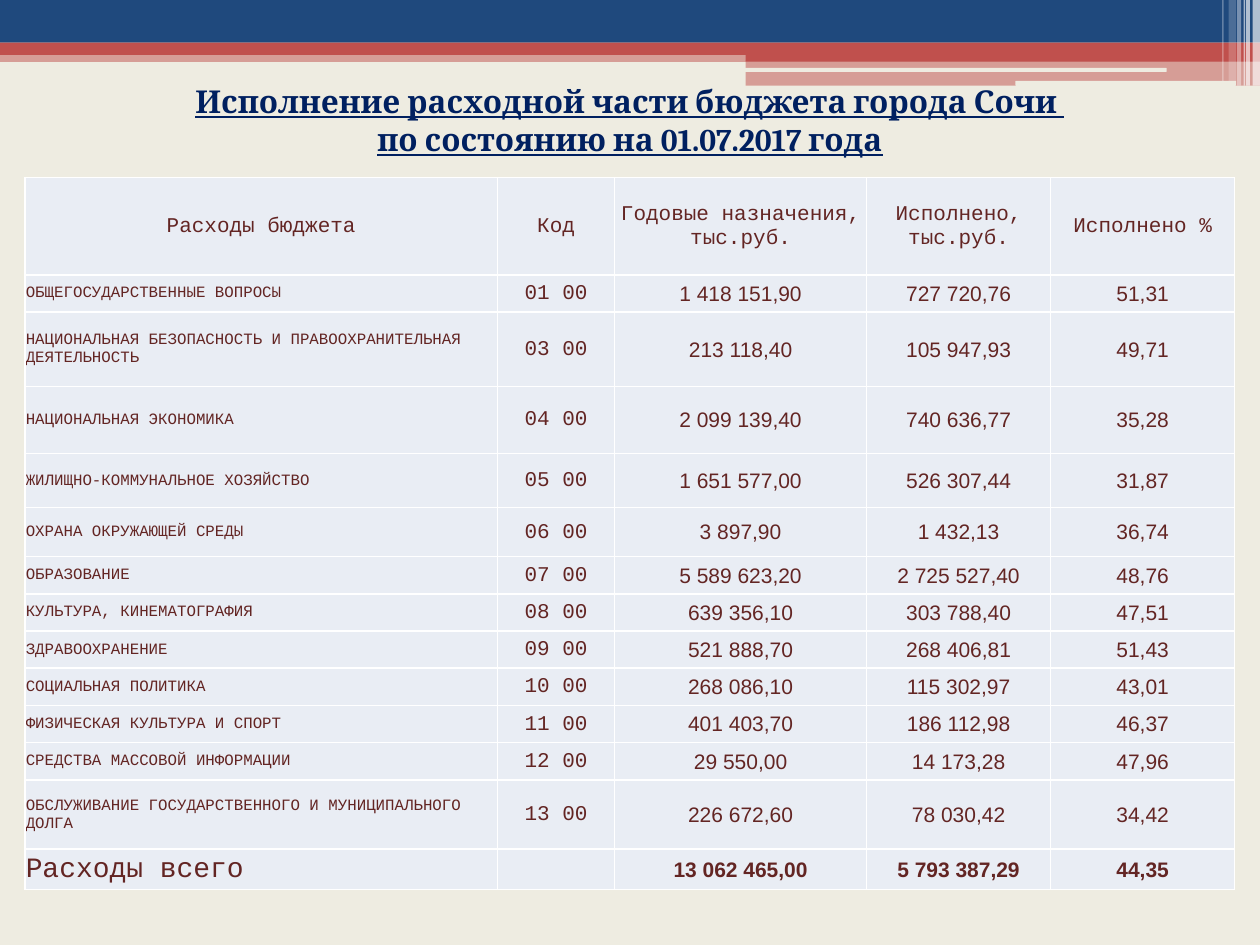
from lxml import etree
from pptx import Presentation
from pptx.dml.color import RGBColor
from pptx.enum.shapes import MSO_SHAPE as Shape
from pptx.enum.text import MSO_ANCHOR as Anchor, PP_ALIGN as Align
from pptx.oxml.ns import qn
from pptx.util import Cm, Pt

NAVY, RED, CREAM, WHITE = "1F497D", "C0504D", "EEECE1", "FFFFFF"
MONO, SANS = "Courier New", "Arial"

TITLE = ["Исполнение расходной части бюджета города Сочи ",
         "по состоянию на 01.07.2017 года"]

BANDS = [
    (0, 1.02, 25.4, 0.23, RED, 50),
    (0, 0, 25.4, 0.86, NAVY, 100),
    (0, 0.86, 25.4, 0.25, RED, 100),
    (15.03, 0.99, 10.37, 0.25, RED, 100),
    (15.03, 1.22, 10.37, 0.51, RED, 50),
]
SLOTS = [(15.01, 1.37, 8.51, 0.08), (20.47, 1.63, 4.45, 0.1)]
STRIPES = [
    (25.25, 0.15, 1.73, 65),
    (25.12, 0.08, 1.73, 65),
    (25.07, 0.03, 1.73, 60),
    (24.94, 0.08, 1.73, 40),
    (24.77, 0.15, 1.63, 20),
    (24.64, 0.03, 1.63, 30),
]

COLS = [9.53, 2.36, 5.08, 3.71, 3.71]
ROWS = [1.96, 0.75, 1.5, 1.35, 1.09, 0.99] + [0.75] * 6 + [1.4, 0.81]
BUDGET = [
    ("Расходы бюджета", "Код", "Годовые назначения, тыс.руб.", "Исполнено, тыс.руб.", "Исполнено %"),
    ("ОБЩЕГОСУДАРСТВЕННЫЕ ВОПРОСЫ", "01 00", "1 418 151,90", "727 720,76", "51,31"),
    ("НАЦИОНАЛЬНАЯ БЕЗОПАСНОСТЬ И ПРАВООХРАНИТЕЛЬНАЯ ДЕЯТЕЛЬНОСТЬ", "03 00",
     "213 118,40", "105 947,93", "49,71"),
    ("НАЦИОНАЛЬНАЯ ЭКОНОМИКА", "04 00", "2 099 139,40", "740 636,77", "35,28"),
    ("ЖИЛИЩНО-КОММУНАЛЬНОЕ ХОЗЯЙСТВО", "05 00", "1 651 577,00", "526 307,44", "31,87"),
    ("ОХРАНА ОКРУЖАЮЩЕЙ СРЕДЫ", "06 00", "3 897,90", "1 432,13", "36,74"),
    ("ОБРАЗОВАНИЕ", "07 00", "5 589 623,20", "2 725 527,40", "48,76"),
    ("КУЛЬТУРА, КИНЕМАТОГРАФИЯ", "08 00", "639 356,10", "303 788,40", "47,51"),
    ("ЗДРАВООХРАНЕНИЕ", "09 00", "521 888,70", "268 406,81", "51,43"),
    ("СОЦИАЛЬНАЯ ПОЛИТИКА", "10 00", "268 086,10", "115 302,97", "43,01"),
    ("ФИЗИЧЕСКАЯ КУЛЬТУРА И СПОРТ", "11 00", "401 403,70", "186 112,98", "46,37"),
    ("СРЕДСТВА МАССОВОЙ ИНФОРМАЦИИ", "12 00", "29 550,00", "14 173,28", "47,96"),
    ("ОБСЛУЖИВАНИЕ ГОСУДАРСТВЕННОГО И МУНИЦИПАЛЬНОГО ДОЛГА", "13 00",
     "226 672,60", "78 030,42", "34,42"),
    ("Расходы всего", "", "13 062 465,00", "5 793 387,29", "44,35"),
]


def rgb(value):
    return RGBColor.from_string(value)


def write(p, text, font=MONO, size=12, color="632523", bold=False, underline=False, align=Align.CENTER):
    p.alignment = align
    r = p.add_run()
    r.text = text
    r.font.name, r.font.size = font, Pt(size)
    r.font.bold, r.font.underline = bold, underline
    r.font.color.rgb = rgb(color)


def cell_format(row, col):
    last = len(BUDGET) - 1
    if row == 0:
        return {}
    if col == 0:
        return {"size": 16 if row == last else 9, "align": Align.LEFT}
    if col == 1:
        return {}
    return {"font": SANS, "bold": row == last}


class BudgetSlide:
    cell_fill = "E9EDF4"
    border_color = WHITE
    border_width = Pt(1)

    def __init__(self, prs):
        self.s = prs.slides.add_slide(prs.slide_layouts[5])
        fill = self.s.background.fill
        fill.solid()
        fill.fore_color.rgb = rgb(CREAM)

    def box(self, x, y, w, h, color, opacity=100, kind=Shape.RECTANGLE):
        sp = self.s.shapes.add_shape(kind, Cm(x), Cm(y), Cm(w), Cm(h))
        sp.shadow.inherit = False
        sp.fill.solid()
        sp.fill.fore_color.rgb = rgb(color)
        sp.line.fill.background()
        if opacity < 100:
            clr = sp._element.spPr.find(qn("a:solidFill")).find(qn("a:srgbClr"))
            etree.SubElement(clr, qn("a:alpha"), val=str(opacity * 1000))

    def title(self, lines, x, y, w, h):
        sp = self.s.shapes.title
        sp.left, sp.top, sp.width, sp.height = Cm(x), Cm(y), Cm(w), Cm(h)
        tf = sp.text_frame
        tf.word_wrap = True
        tf.vertical_anchor = Anchor.MIDDLE
        for i, line in enumerate(lines):
            p = tf.add_paragraph() if i else tf.paragraphs[0]
            write(p, line, font="Cambria", size=18, color="002060", bold=True, underline=True)

    def borders(self, cell):
        tc_pr = cell._tc.get_or_add_tcPr()
        for side in ("lnL", "lnR", "lnT", "lnB"):
            ln = etree.SubElement(tc_pr, qn(f"a:{side}"), w=str(self.border_width))
            fill = etree.SubElement(ln, qn("a:solidFill"))
            etree.SubElement(fill, qn("a:srgbClr"), val=self.border_color)

    def table(self, data, x, y, cols, rows):
        frame = self.s.shapes.add_table(len(rows), len(cols), Cm(x), Cm(y), Cm(sum(cols)), Cm(sum(rows)))
        tbl = frame.table
        for column, w in zip(tbl.columns, cols):
            column.width = Cm(w)
        for row, h in zip(tbl.rows, rows):
            row.height = Cm(h)
        for i, record in enumerate(data):
            for j, text in enumerate(record):
                cell = tbl.cell(i, j)
                self.borders(cell)
                cell.fill.solid()
                cell.fill.fore_color.rgb = rgb(self.cell_fill)
                cell.margin_left = cell.margin_right = cell.margin_top = Cm(0.02)
                cell.margin_bottom = 0
                cell.vertical_anchor = Anchor.MIDDLE
                if text:
                    write(cell.text_frame.paragraphs[0], text, **cell_format(i, j))


def main():
    prs = Presentation()
    prs.slide_width, prs.slide_height = Cm(25.4), Cm(19.05)
    page = BudgetSlide(prs)
    for band in BANDS:
        page.box(*band)
    for slot in SLOTS:
        page.box(*slot, CREAM, kind=Shape.ROUNDED_RECTANGLE)
    for x, w, h, opacity in STRIPES:
        page.box(x, 0, w, h, WHITE, opacity)
    page.table(BUDGET, 0.5, 3.58, COLS, ROWS)
    page.title(TITLE, 0.5, 1.52, 24.4, 1.8)
    prs.save("out.pptx")


if __name__ == "__main__":
    main()
